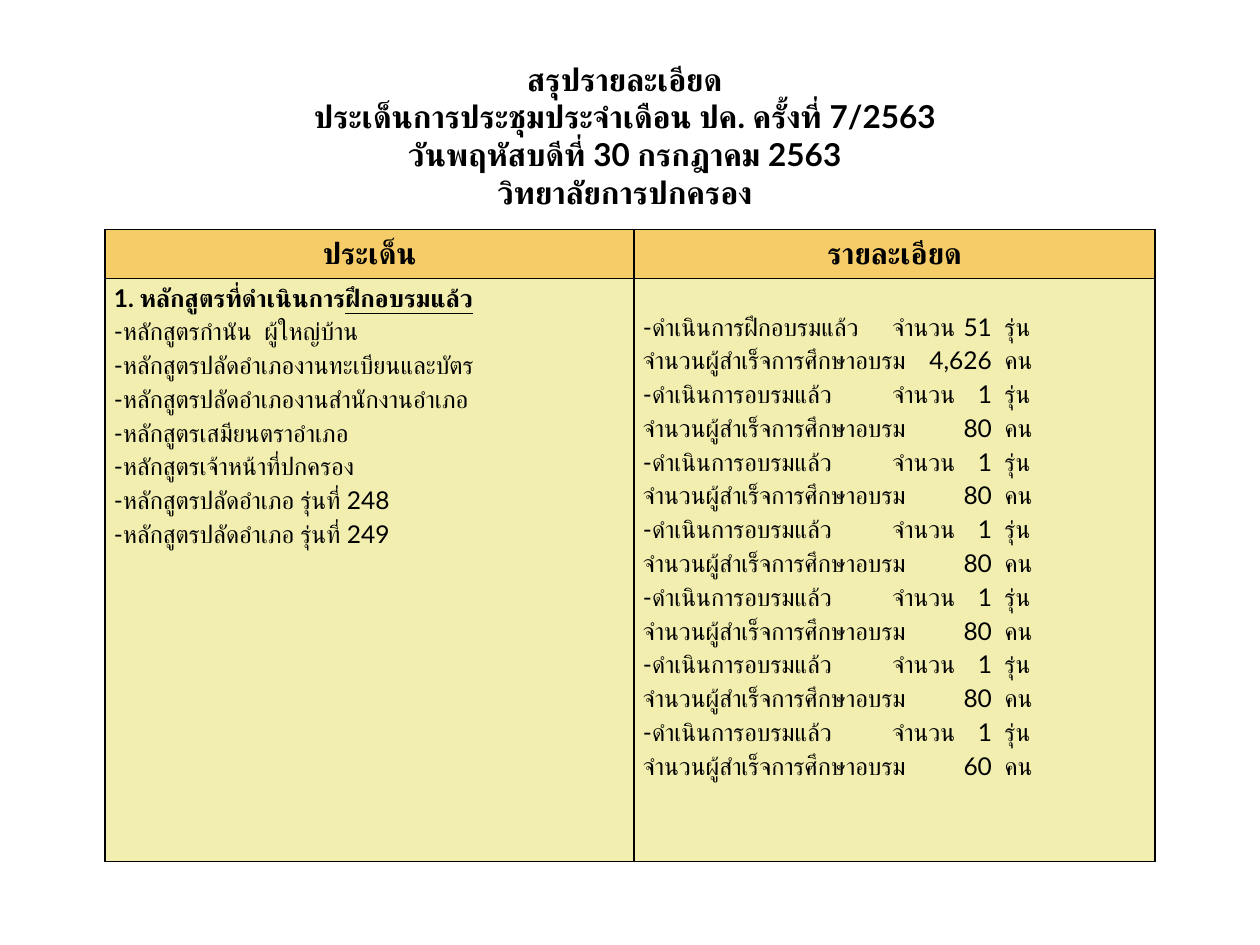
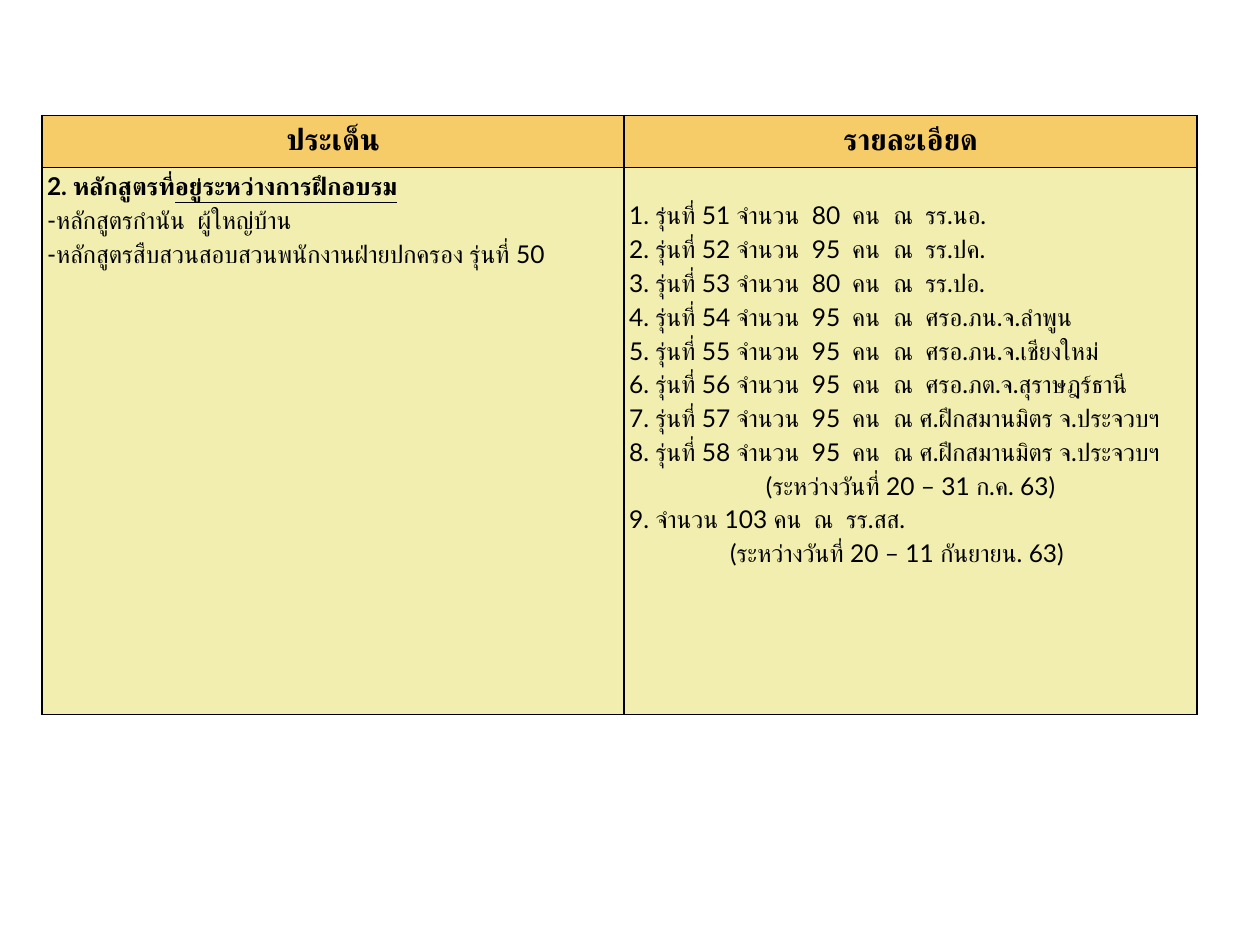
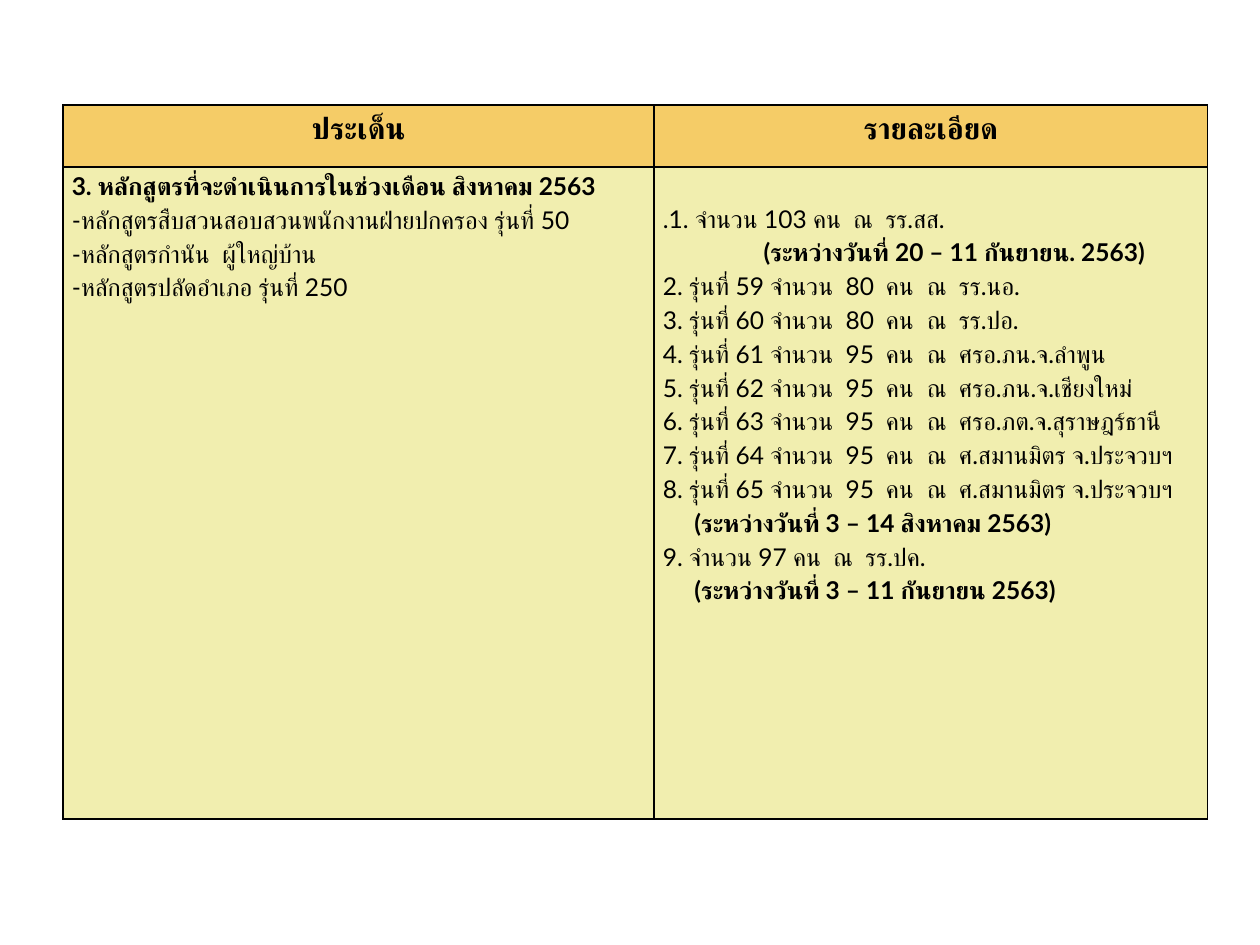
"""Build the three-slide summary of the monthly meeting of the administration college."""
from dataclasses import dataclass

import pptx
import pptx.dml.color
import pptx.enum.text
import pptx.oxml
import pptx.oxml.ns
import pptx.util
from lxml import etree

ALIGN = pptx.enum.text.PP_ALIGN
CELL = pptx.util.Inches(1) // 12
FONT = "Lato"
INK, HEADER_FILL, BODY_FILL = "000000", "F5CC67", "F1EEAF"
TITLE_SIZE, HEADER_SIZE, BODY_SIZE = 18, 17, 14
HEADER_MARGIN, LINE_SPACING = 0.07, 1.15
HEADINGS = ("ประเด็น", "รายละเอียด")
COUNT_TABS = ((1.98, "l"), (2.77, "r"), (2.87, "l"))
BATCH_TABS = ((1.45, "l"), (1.77, "l"), (2.1, "l"), (2.35, "l"))
TITLE = (
    "สรุปรายละเอียด\n"
    "ประเด็นการประชุมประจำเดือน ปค. ครั้งที่ 7/2563\n"
    "วันพฤหัสบดีที่ 30 กรกฎาคม 2563\n"
    "วิทยาลัยการปกครอง"
)


@dataclass(frozen=True)
class Line:
    """One paragraph of a table cell, with indent and tab stops in inches."""
    text: str
    underlined: str = ""
    bold: bool = False
    centred: bool = False
    indent: float = 0
    tabs: tuple[tuple[float, str], ...] = ()


@dataclass(frozen=True)
class Agenda:
    """One issue table, measured in grid columns and rows of a twelfth of an inch."""
    left: float
    top: float
    columns: tuple[float, float]
    rows: tuple[float, float]
    margin: float
    detail_drop: float
    issues: list[Line]
    details: list[Line]


def grid(units: float) -> int:
    """Turn grid units into a slide length."""
    return round(units * CELL)


def colour(value: str) -> pptx.dml.color.RGBColor:
    """Turn a hex string into a colour."""
    return pptx.dml.color.RGBColor.from_string(value)


def style_run(run, size: float, bold: bool) -> None:
    """Give a run the shared typeface for Latin and Thai letters."""
    run.font.size = pptx.util.Pt(size)
    run.font.bold = bold
    run.font.color.rgb = colour(INK)
    run.font.name = FONT
    thai = etree.SubElement(run.font._element, pptx.oxml.ns.qn("a:cs"))
    thai.set("typeface", FONT)


def add_tabs(paragraph, tabs: tuple[tuple[float, str], ...]) -> None:
    """Set the tab stops of a paragraph."""
    stops = etree.SubElement(paragraph._p.get_or_add_pPr(), pptx.oxml.ns.qn("a:tabLst"))
    for position, side in tabs:
        stop = etree.SubElement(stops, pptx.oxml.ns.qn("a:tab"))
        stop.set("pos", str(pptx.util.Inches(position)))
        stop.set("algn", side)


def write_line(paragraph, line: Line, size: float) -> None:
    """Write and format one line."""
    if line.tabs:
        add_tabs(paragraph, line.tabs)
    if line.indent:
        paragraph._p.get_or_add_pPr().set("marL", str(pptx.util.Inches(line.indent)))
    paragraph.alignment = ALIGN.CENTER if line.centred else ALIGN.LEFT
    paragraph.line_spacing = LINE_SPACING
    paragraph.text = line.text
    if line.underlined:
        emphasis = paragraph.add_run()
        emphasis.text = line.underlined
        emphasis.font.underline = True
    for run in paragraph.runs:
        style_run(run, size, line.bold)


def add_borders(cell) -> None:
    """Draw a one-point line on every side of a cell."""
    properties = cell._tc.get_or_add_tcPr()
    for position, side in enumerate(("lnL", "lnR", "lnT", "lnB")):
        border = pptx.oxml.parse_xml(
            f'<a:{side} {pptx.oxml.ns.nsdecls("a")} w="12700"><a:solidFill>'
            f'<a:srgbClr val="{INK}"/></a:solidFill></a:{side}>'
        )
        properties.insert(position, border)


def fill_cell(cell, lines: list[Line], size: float, fill: str, margin: float, drop: float = 0) -> None:
    """Fill a cell with lines, its colour, margins and borders."""
    cell.fill.solid()
    cell.fill.fore_color.rgb = colour(fill)
    cell.margin_left = cell.margin_right = pptx.util.Inches(margin)
    cell.margin_top, cell.margin_bottom = pptx.util.Inches(drop), 0
    add_borders(cell)
    frame = cell.text_frame
    for number, line in enumerate(lines):
        write_line(frame.add_paragraph() if number else frame.paragraphs[0], line, size)


def add_agenda(slide, agenda: Agenda) -> None:
    """Draw the table of issues and details."""
    table = slide.shapes.add_table(
        2, 2, grid(agenda.left), grid(agenda.top), grid(sum(agenda.columns)), grid(sum(agenda.rows))
    ).table
    table.first_row = table.horz_banding = False
    for column, width in zip(table.columns, agenda.columns):
        column.width = grid(width)
    for row, height in zip(table.rows, agenda.rows):
        row.height = grid(height)
    for index, heading in enumerate(HEADINGS):
        fill_cell(table.cell(0, index), [Line(heading, bold=True, centred=True)],
                  HEADER_SIZE, HEADER_FILL, HEADER_MARGIN)
    fill_cell(table.cell(1, 0), agenda.issues, BODY_SIZE, BODY_FILL, agenda.margin)
    fill_cell(table.cell(1, 1), agenda.details, BODY_SIZE, BODY_FILL, agenda.margin, agenda.detail_drop)


def add_title(slide) -> None:
    """Place the meeting title in the title placeholder."""
    title = slide.shapes.title
    title.left, title.top, title.width, title.height = map(grid, (13, 5, 93, 15.75))
    frame = title.text_frame
    frame.text = TITLE
    frame.word_wrap = True
    frame.auto_size = pptx.enum.text.MSO_AUTO_SIZE.SHAPE_TO_FIT_TEXT
    frame.vertical_anchor = pptx.enum.text.MSO_ANCHOR.MIDDLE
    for paragraph in frame.paragraphs:
        paragraph.alignment = ALIGN.CENTER
        for run in paragraph.runs:
            style_run(run, TITLE_SIZE, True)


def completed(action: str, batches: int, graduates: str) -> list[Line]:
    """Describe a finished course by its batches and graduates."""
    return [
        Line(f"-{action}\tจำนวน\t{batches}\tรุ่น", tabs=COUNT_TABS),
        Line(f"จำนวนผู้สำเร็จการศึกษาอบรม\t{graduates}\tคน", tabs=COUNT_TABS),
    ]


def batches(first_item: int, first_batch: int, places: list[tuple[int, str]], gap: str = "\t") -> list[Line]:
    """Number consecutive batches with their people and places."""
    return [
        Line(f"{first_item + step}. รุ่นที่ {first_batch + step} จำนวน\t{people}\tคน\tณ{gap}{place}",
             tabs=BATCH_TABS)
        for step, (people, place) in enumerate(places)
    ]


REGIONS = [(95, "ศรอ.ภน.จ.ลำพูน"), (95, "ศรอ.ภน.จ.เชียงใหม่"), (95, "ศรอ.ภต.จ.สุราษฎร์ธานี")]
HEADMEN = Line("-หลักสูตรกำนัน  ผู้ใหญ่บ้าน")
INVESTIGATION = Line("-หลักสูตรสืบสวนสอบสวนพนักงานฝ่ายปกครอง รุ่นที่ 50")

FINISHED = Agenda(
    10, 21.85, (50.4, 49.6), (4.68, 55.5), 0.07, 0.23,
    [
        Line("1. หลักสูตรที่ดำเนินการ", "ฝึกอบรมแล้ว", bold=True),
        HEADMEN,
        Line("-หลักสูตรปลัดอำเภองานทะเบียนและบัตร"),
        Line("-หลักสูตรปลัดอำเภองานสำนักงานอำเภอ"),
        Line("-หลักสูตรเสมียนตราอำเภอ"),
        Line("-หลักสูตรเจ้าหน้าที่ปกครอง"),
        Line("-หลักสูตรปลัดอำเภอ รุ่นที่ 248"),
        Line("-หลักสูตรปลัดอำเภอ รุ่นที่ 249"),
    ],
    completed("ดำเนินการฝึกอบรมแล้ว", 51, "4,626")
    + completed("ดำเนินการอบรมแล้ว", 1, "80") * 5
    + completed("ดำเนินการอบรมแล้ว", 1, "60"),
)

ONGOING = Agenda(
    4, 11, (55.45, 54.55), (4.95, 52.1), 0.04, 0.23,
    [Line("2. หลักสูตรที่", "อยู่ระหว่างการฝึกอบรม", bold=True), HEADMEN, INVESTIGATION],
    batches(1, 51, [(80, "รร.นอ."), (95, "รร.ปค."), (80, "รร.ปอ."), *REGIONS])
    + batches(7, 57, [(95, "ศ.ฝึกสมานมิตร จ.ประจวบฯ")] * 2, gap=" ")
    + [
        Line("(ระหว่างวันที่ 20 – 31 ก.ค. 63)", centred=True),
        Line("9. จำนวน 103 คน  ณ  รร.สส."),
        Line("(ระหว่างวันที่ 20 – 11 กันยายน. 63)", indent=0.8),
    ],
)

UPCOMING = Agenda(
    6, 10, (56.3, 52.7), (5.9, 62.1), 0.07, 0.26,
    [
        Line("3. หลักสูตรที่จะดำเนินการในช่วงเดือน สิงหาคม 2563", bold=True),
        INVESTIGATION,
        HEADMEN,
        Line("-หลักสูตรปลัดอำเภอ รุ่นที่ 250"),
    ],
    [
        Line(".1. จำนวน 103 คน  ณ  รร.สส."),
        Line("(ระหว่างวันที่ 20 – 11 กันยายน. 2563)", bold=True, indent=0.8),
        *batches(2, 59, [(80, "รร.นอ."), (80, "รร.ปอ."), *REGIONS, *[(95, "ศ.สมานมิตร จ.ประจวบฯ")] * 2]),
        Line("(ระหว่างวันที่ 3 – 14 สิงหาคม 2563)", bold=True, indent=0.25),
        Line("9. จำนวน 97 คน  ณ  รร.ปค."),
        Line("(ระหว่างวันที่ 3 – 11 กันยายน 2563)", bold=True, indent=0.25),
    ],
)


def main() -> None:
    """Build and save the presentation."""
    deck = pptx.Presentation()
    deck.slide_width, deck.slide_height = grid(120), grid(90)
    title_only, blank = deck.slide_layouts[5], deck.slide_layouts[6]
    opening = deck.slides.add_slide(title_only)
    add_title(opening)
    add_agenda(opening, FINISHED)
    for agenda in (ONGOING, UPCOMING):
        add_agenda(deck.slides.add_slide(blank), agenda)
    deck.save("out.pptx")


if __name__ == "__main__":
    main()
